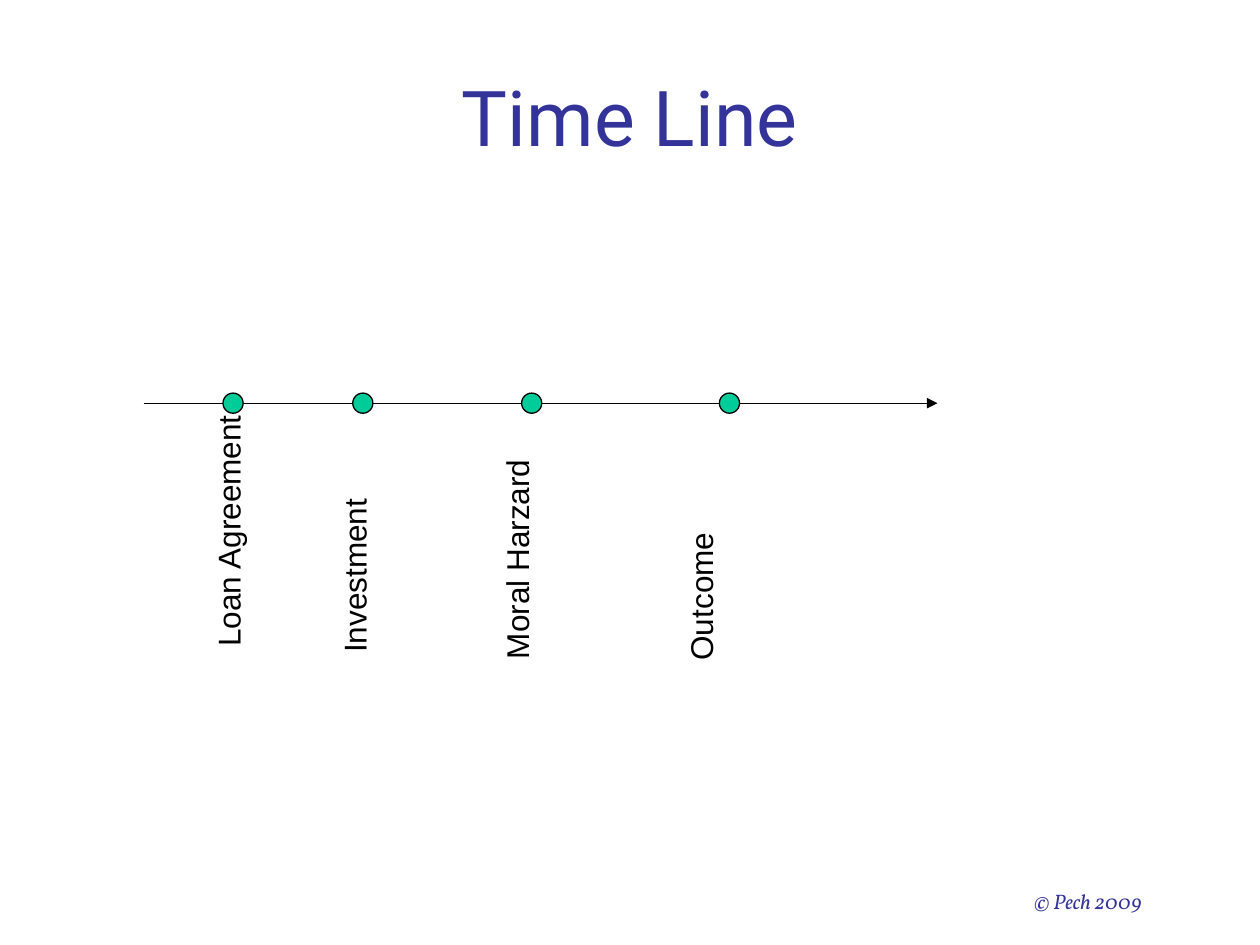
from typing import NamedTuple

from lxml import etree
from pptx import Presentation
from pptx.dml.color import RGBColor
from pptx.enum.shapes import MSO_CONNECTOR, MSO_SHAPE
from pptx.enum.text import MSO_ANCHOR, MSO_AUTO_SIZE, PP_ALIGN
from pptx.oxml.ns import qn
from pptx.util import Inches, Pt

LINE = MSO_CONNECTOR.STRAIGHT
OVAL = MSO_SHAPE.OVAL
MIDDLE = MSO_ANCHOR.MIDDLE
CENTER = PP_ALIGN.CENTER
GROW = MSO_AUTO_SIZE.SHAPE_TO_FIT_TEXT

WIDE, HIGH = Inches(10), Inches(7.5)
NAVY, BLACK, GREEN = "333399", "000000", "00CC99"
AXIS = 3.2 / 7.5
DOT = Inches(0.16)


class Event(NamedTuple):
    """A stage: dot centre and label box, as shares of the slide."""
    name: str
    dot: float
    left: float
    top: float
    tall: float


EVENTS = [
    Event("Loan Agreement", 0.185, 0.161, 3.28 / 7.5, 0.26),
    Event("Investment", 0.288, 0.261, 3.96 / 7.5, 0.176),
    Event("Moral Harzard", 0.422, 0.39, 3.65 / 7.5, 0.224),
    Event("Outcome", 0.579, 0.536, 4.22 / 7.5, 1.12 / 7.5),
]


def paint(color, code: str) -> None:
    color.rgb = RGBColor.from_string(code)


def place(shape, left: float, top: float, wide: float, tall: float) -> None:
    shape.left, shape.width = int(WIDE * left), int(WIDE * wide)
    shape.top, shape.height = int(HIGH * top), int(HIGH * tall)


def write(shape, text: str, face: str, size: int, code: str):
    shape.text_frame.text = text
    font = shape.text_frame.paragraphs[0].runs[0].font
    font.name, font.size = face, Pt(size)
    paint(font.color, code)
    return font


def add_title(slide) -> None:
    title = slide.shapes.title
    place(title, 0.05, 0.04, 0.9, 1.24 / 7.5)
    write(title, "Time Line", "Roboto", 44, NAVY)
    title.text_frame.vertical_anchor = MIDDLE
    title.text_frame.paragraphs[0].alignment = CENTER


def add_note(slide) -> None:
    box = slide.shapes.add_textbox(0, 0, 0, 0)
    place(box, 0.811, 7 / 7.5, 0.161, 0.04)
    box.text_frame.word_wrap = True
    write(box, "© Pech 2009", "Vollkorn", 12, NAVY).italic = True


def add_axis(slide) -> None:
    level = int(HIGH * AXIS)
    axis = slide.shapes.add_connector(
        LINE, int(WIDE * 0.114), level, int(WIDE * 0.744), level)
    axis.line.width = Pt(0.75)
    paint(axis.line.color, BLACK)
    stroke = axis.line._get_or_add_ln()
    etree.SubElement(stroke, qn("a:tailEnd"), type="triangle")
    etree.SubElement(axis._element.spPr, qn("a:effectLst"))


def add_label(slide, event: Event) -> None:
    """Upward text: vertical writing turned by half a circle."""
    box = slide.shapes.add_textbox(0, 0, 0, 0)
    place(box, event.left, event.top, 0.05, event.tall)
    box.rotation = 180
    box.text_frame.word_wrap = False
    box.text_frame.auto_size = GROW
    box.text_frame._txBody.bodyPr.set("vert", "eaVert")
    write(box, event.name, "Arial", 18, BLACK)


def add_dot(slide, event: Event) -> None:
    dot = slide.shapes.add_shape(
        OVAL, int(WIDE * event.dot - DOT / 2), int(HIGH * AXIS - DOT / 2),
        DOT, DOT)
    dot.shadow.inherit = False
    dot.fill.solid()
    paint(dot.fill.fore_color, GREEN)
    paint(dot.line.color, BLACK)
    dot.line.width = Pt(0.75)


def main() -> None:
    deck = Presentation()
    deck.slide_width, deck.slide_height = WIDE, HIGH
    slide = deck.slides.add_slide(deck.slide_layouts.get_by_name("Title Only"))
    add_note(slide)
    add_title(slide)
    add_axis(slide)
    for event in EVENTS:
        add_label(slide, event)
    for event in EVENTS:
        add_dot(slide, event)
    deck.save("out.pptx")


if __name__ == "__main__":
    main()
